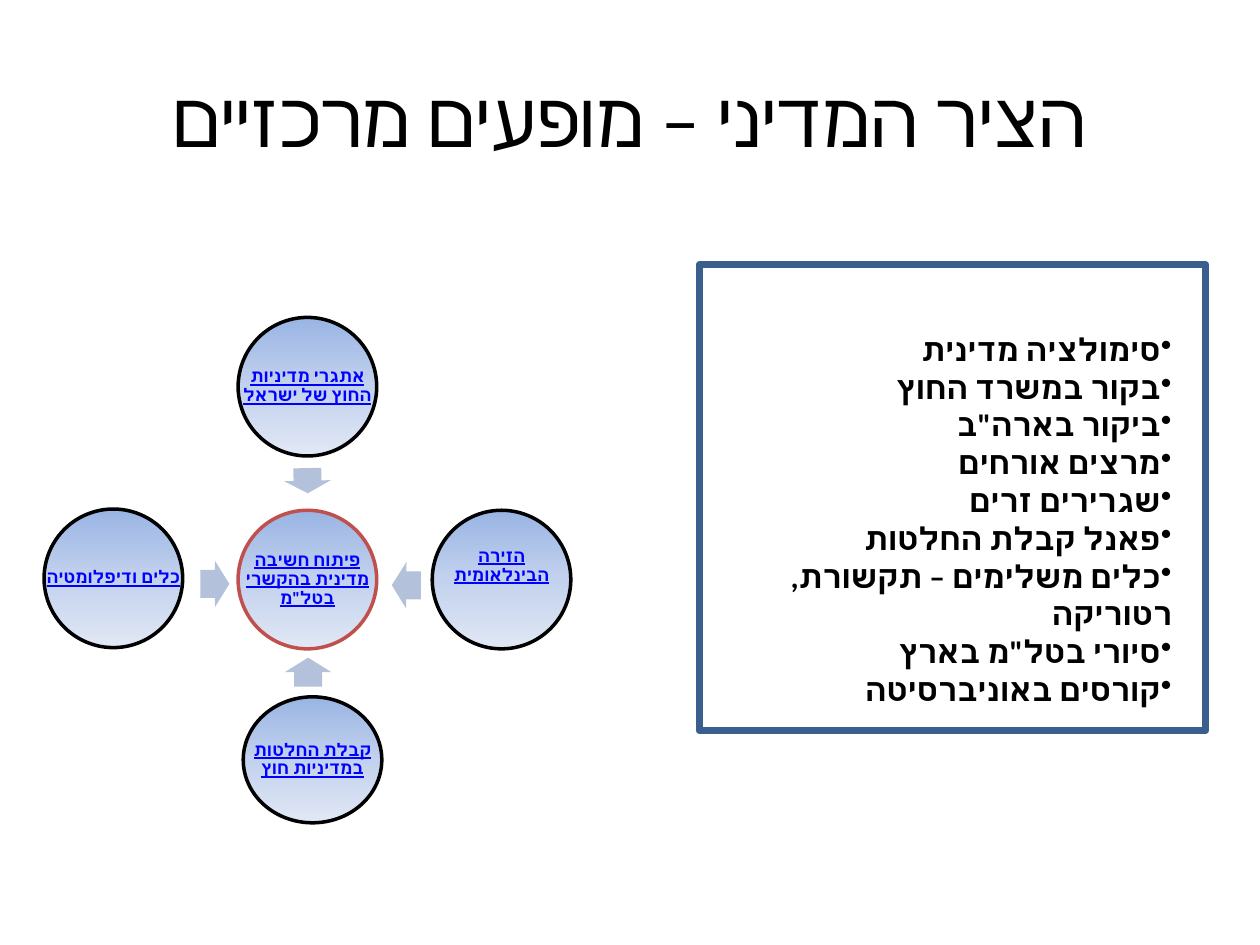
import copy
import pptx
import pptx.util
import pptx.dml.color
import pptx.enum.shapes
import pptx.enum.text
import pptx.oxml.ns
import lxml.etree

Pt = pptx.util.Pt
RGB = pptx.dml.color.RGBColor.from_string
MSO = pptx.enum.shapes.MSO_SHAPE
ALIGN = pptx.enum.text.PP_ALIGN
MIDDLE = pptx.enum.text.MSO_ANCHOR.MIDDLE
qn = pptx.oxml.ns.qn
C = {"text": "000000", "link": "0000FF", "ring": "000000", "core": "C0504D",
     "arrow": "B3C1DB", "frame": "3A5F8C",
     "top": "9AB5E4", "mid": "C2D1ED", "bottom": "E1E8F5"}

prs = pptx.Presentation()
prs.slide_width, prs.slide_height = Pt(720), Pt(540)
s = prs.slides.add_slide(prs.slide_layouts[6])


def add_text(box, lines, size, color, align, bold=False, underline=False, bullet=None):
    tf = s.shapes.add_textbox(*[Pt(v) for v in box]).text_frame
    tf.word_wrap = True
    tf.text = "\n".join(lines)
    for p in tf.paragraphs:
        p.alignment = align
        pPr = p._p.get_or_add_pPr()
        pPr.set("rtl", "1")
        if bullet:
            lxml.etree.SubElement(pPr, qn("a:buChar")).set("char", bullet)
        for r in p.runs:
            r.font.name, r.font.size = "Calibri", Pt(size)
            r.font.bold, r.font.underline = bold, underline
            r.font.color.rgb = RGB(color)
            cs = lxml.etree.SubElement(r._r.get_or_add_rPr(), qn("a:cs"))
            cs.set("typeface", "Calibri")
    return tf


def add_shape(kind, box):
    sp = s.shapes.add_shape(kind, *[Pt(v) for v in box])
    sp.shadow.inherit = False
    return sp


tf = add_text((36, 21.6, 648, 90), ["הציר המדיני – מופעים מרכזיים"], 44, C["text"], ALIGN.CENTER)
tf.vertical_anchor = MIDDLE

activities = ["סימולציה מדינית", "בקור במשרד החוץ", "ביקור בארה\"ב", "מרצים אורחים",
              "שגרירים זרים", "פאנל קבלת החלטות", "כלים משלימים – תקשורת, רטוריקה",
              "סיורי בטל\"מ בארץ", "קורסים באוניברסיטה"]
add_text((382.3, 185, 294.5, 247), activities, 18, C["text"], ALIGN.RIGHT, bold=True, bullet="•")

circles = [
    ("פיתוח חשיבה מדינית בהקשרי בטל\"מ", 136.1, 291.6, 79.2, "core", 0.72),
    ("אתגרי מדיניות החוץ של ישראל", 136.1, 181.4, 79.2, "ring", 0.72),
    ("הזירה הבינלאומית", 247, 291.6, 79.2, "ring", 16),
    ("קבלת החלטות במדיניות חוץ", 139, 398.2, 72, "ring", 0.72),
    ("כלים ודיפלומטיה", 25.2, 290.9, 79.2, "ring", 0.72),
]
for text, x, y, h, line, bottom in circles:
    box = (x, y, 79.2, h)
    sp = add_shape(MSO.OVAL, box)
    sp.fill.gradient()
    sp.fill.gradient_angle = 270
    first, last = sp.fill.gradient_stops
    first.position, last.position = 0.5, 1
    first.color.rgb, last.color.rgb = RGB(C["mid"]), RGB(C["bottom"])
    gs = sp._element.spPr.find(".//" + qn("a:gs"))
    gs.addprevious(copy.deepcopy(gs))
    start = sp.fill.gradient_stops[0]
    start.position, start.color.rgb = 0, RGB(C["top"])
    sp.line.color.rgb, sp.line.width = RGB(C[line]), Pt(2)

    tf = add_text(box, [text], 10, C["link"], ALIGN.CENTER, bold=True, underline=True)
    tf.margin_left = tf.margin_right = tf.margin_top = Pt(0.72)
    tf.margin_bottom = Pt(bottom)
    tf.vertical_anchor = MIDDLE
    tf.paragraphs[0].line_spacing = 0.9

arrows = [(167.8, 370.8, 16.6, 270), (114.5, 320.4, 16.6, 0),
          (168.5, 261.4, 14.4, 88.7), (223.9, 321.1, 16.6, 180.5)]
for x, y, w, angle in arrows:
    sp = add_shape(MSO.RIGHT_ARROW, (x, y, w, 26.6))
    sp.adjustments[0], sp.adjustments[1] = 0.6, 0.5
    sp.rotation = angle
    sp.fill.solid()
    sp.fill.fore_color.rgb = RGB(C["arrow"])
    sp.line.fill.background()

sp = add_shape(MSO.RECTANGLE, (399.6, 151.2, 289.4, 266.4))
sp.fill.background()
sp.line.color.rgb, sp.line.width = RGB(C["frame"]), Pt(4)

prs.save("out.pptx")
